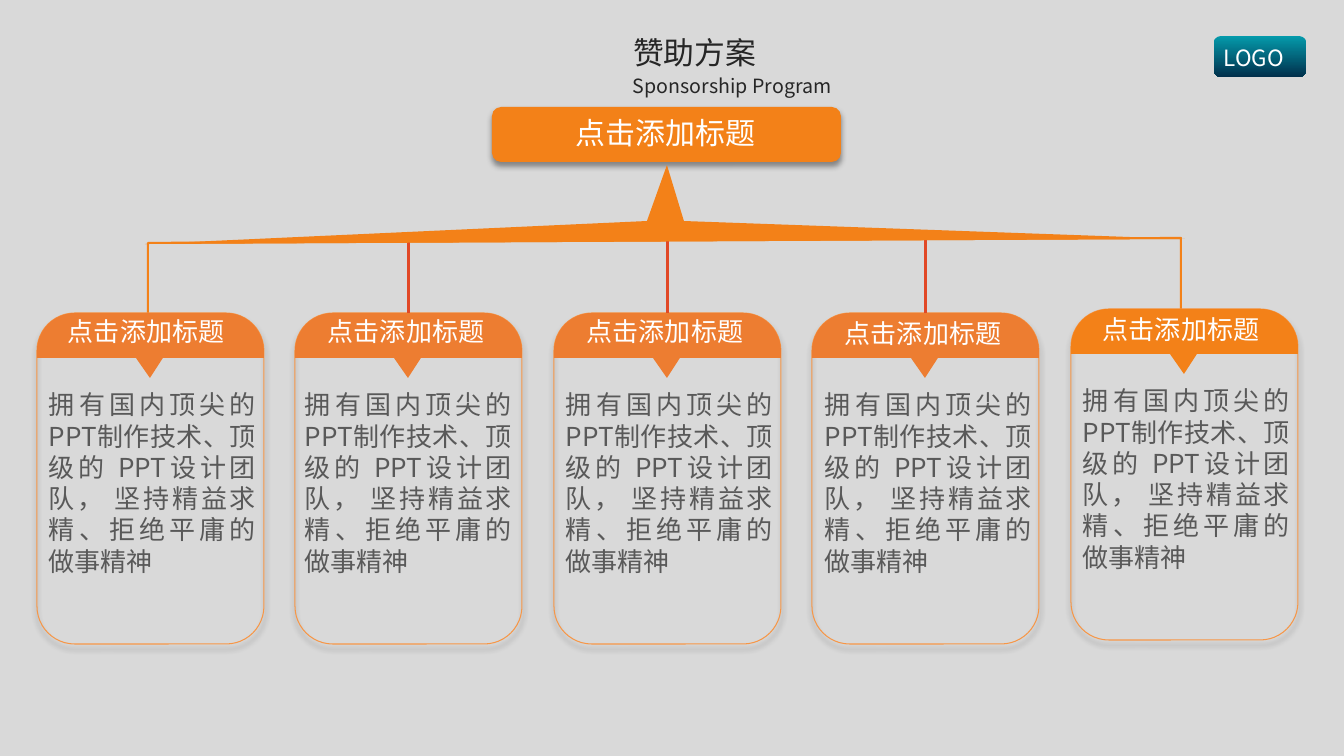
from math import cos, pi, sin

from lxml import etree
from pptx import Presentation
from pptx.dml.color import RGBColor
from pptx.enum.shapes import MSO_CONNECTOR as CONNECTOR, MSO_SHAPE as SHAPE
from pptx.enum.text import MSO_ANCHOR as ANCHOR, MSO_AUTO_SIZE as AUTO_SIZE, PP_ALIGN as ALIGN
from pptx.oxml import parse_xml
from pptx.oxml.ns import qn
from pptx.util import Pt

PX = 914400 / 100.8
FONT = "Noto Sans CJK SC"
ORANGE, HEADER_ORANGE, BORDER, RED = "F38118", "ED7D31", "F79646", "E14826"
WHITE, GREY, DARK = "FFFFFF", "595959", "262626"
color = RGBColor.from_string
SHADOW = (
    '<a:effectLst xmlns:a="http://schemas.openxmlformats.org/drawingml/2006/main">'
    '<a:outerShdw blurRad="50800" dist="38100" dir="5400000" algn="t" rotWithShape="0">'
    '<a:srgbClr val="000000"><a:alpha val="40000"/></a:srgbClr></a:outerShdw></a:effectLst>'
)


def px(*lengths):
    return [round(length * PX) for length in lengths]


def write(shape, text, size, hex_color, align=ALIGN.LEFT, wrap=True):
    frame = shape.text_frame
    frame.word_wrap = wrap
    frame.auto_size = AUTO_SIZE.SHAPE_TO_FIT_TEXT
    frame.vertical_anchor = ANCHOR.TOP
    frame.text = text
    paragraph = frame.paragraphs[0]
    paragraph.alignment = align
    paragraph.line_spacing = 1.0
    font = paragraph.runs[0].font
    font.size, font.name = Pt(size), FONT
    font.color.rgb = color(hex_color)
    east_asian = etree.SubElement(paragraph.runs[0]._r.rPr, qn("a:ea"))
    east_asian.set("typeface", FONT)


deck = Presentation()
deck.slide_width, deck.slide_height = px(1344, 756)
slide = deck.slides.add_slide(deck.slide_layouts[5])
slide.background.fill.solid()
slide.background.fill.fore_color.rgb = color("D9D9D9")
shapes = slide.shapes

# Heading
title = shapes.title
title.left, title.top, title.width, title.height = px(623, 29, 193, 47)
write(title, "赞助方案", 22, DARK, ALIGN.JUSTIFY)
subtitle = shapes.add_textbox(*px(623, 69, 238, 34))
write(subtitle, "Sponsorship Program", 14, DARK, ALIGN.JUSTIFY)

# Badge
badge = shapes.add_shape(SHAPE.ROUNDED_RECTANGLE, *px(1214, 36, 92, 41))
badge.shadow.inherit = False
badge.line.fill.background()
badge.fill.gradient()
badge.fill.gradient_angle = 270
for stop, shade in zip(badge.fill.gradient_stops, ("049AAB", "01304C")):
    stop.color.rgb = color(shade)
write(shapes.add_textbox(*px(1214, 39, 87, 37)), "LOGO", 16, WHITE, wrap=False)

# Top banner
banner = shapes.add_shape(SHAPE.ROUNDED_RECTANGLE, *px(492, 107, 349, 55))
banner.fill.solid()
banner.fill.fore_color.rgb = color(ORANGE)
banner.line.fill.background()
banner._element.spPr.append(parse_xml(SHADOW))
write(shapes.add_textbox(*px(566, 110, 202, 46)), "点击添加标题", 21.4, WHITE, wrap=False)

# Outer bracket
bracket_path = shapes.build_freeform(*px(148, 330), scale=1.0)
bracket_path.add_line_segments([px(148, 243), px(1181, 238), px(1181, 325)], close=False)
bracket = bracket_path.convert_to_shape()
bracket.shadow.inherit = False
bracket.fill.background()
bracket.line.color.rgb = color(ORANGE)
bracket.line.width = Pt(1.5)

# Cards: left, top, label left and top, description left, header colour
CARD_W, CARD_H, RADIUS, HEADER_H, TIP_H = 227, 331, 38, 45, 65
rows = [
    (313, 58, 311, 39, HEADER_ORANGE),
    (313, 318, 311, 295, HEADER_ORANGE),
    (313, 577, 311, 556, HEADER_ORANGE),
    (313, 835, 313, 815, HEADER_ORANGE),
    (309, 1093, 309, 1073, ORANGE),
]
corner = [(RADIUS * (1 - cos(step * pi / 24)), RADIUS * (1 - sin(step * pi / 24))) for step in range(13)]
header_outline = corner + [(CARD_W - x, y) for x, y in reversed(corner)] + [
    (CARD_W, HEADER_H), (126, HEADER_H), (113, TIP_H), (99, HEADER_H), (0, HEADER_H)]
cards = []
for index, (top, label_left, label_top, description_left, header_color) in enumerate(rows):
    left = 37 + index * 517 // 2
    card = shapes.add_shape(SHAPE.ROUNDED_RECTANGLE, *px(left, top, CARD_W, CARD_H))
    card.fill.background()
    card.line.color.rgb = color(BORDER)
    card.line.width = Pt(0.75)
    card._element.spPr.append(parse_xml(SHADOW))
    cards.append(card)

    outline = [px(left + x, top + y) for x, y in header_outline]
    header_path = shapes.build_freeform(*outline[0], scale=1.0)
    header_path.add_line_segments(outline[1:])
    header = header_path.convert_to_shape()
    header.shadow.inherit = False
    header.fill.solid()
    header.fill.fore_color.rgb = color(header_color)
    header.line.fill.background()

    label = shapes.add_textbox(*px(label_left, label_top, 178, 42))
    write(label, "点击添加标题", 18.6, WHITE, wrap=False)
    description = shapes.add_textbox(*px(description_left, top + 71, 227, 201))
    write(description, "拥有国内顶尖的 PPT制作技术、顶级的 PPT设计团队， 坚持精益求精、拒绝平庸的做事精神",
          18.6, GREY, ALIGN.JUSTIFY)

# Drop lines to the three middle cards
for card in cards[1:4]:
    center = card.left + card.width // 2
    drop = shapes.add_connector(CONNECTOR.STRAIGHT, center, px(238)[0], center, card.top)
    drop.end_connect(card, 0)
    drop.line.color.rgb = color(RED)
    drop.line.width = Pt(1.5)
    etree.SubElement(drop._element.spPr, qn("a:effectLst"))

# Pointed beam under the banner
beam_path = shapes.build_freeform(*px(667, 165), scale=1.0)
beam_path.add_line_segments([px(647, 221), px(145, 244), px(1185, 239), px(684, 221)])
beam = beam_path.convert_to_shape()
beam.shadow.inherit = False
beam.fill.solid()
beam.fill.fore_color.rgb = color(ORANGE)
beam.line.fill.background()

deck.save("out.pptx")
